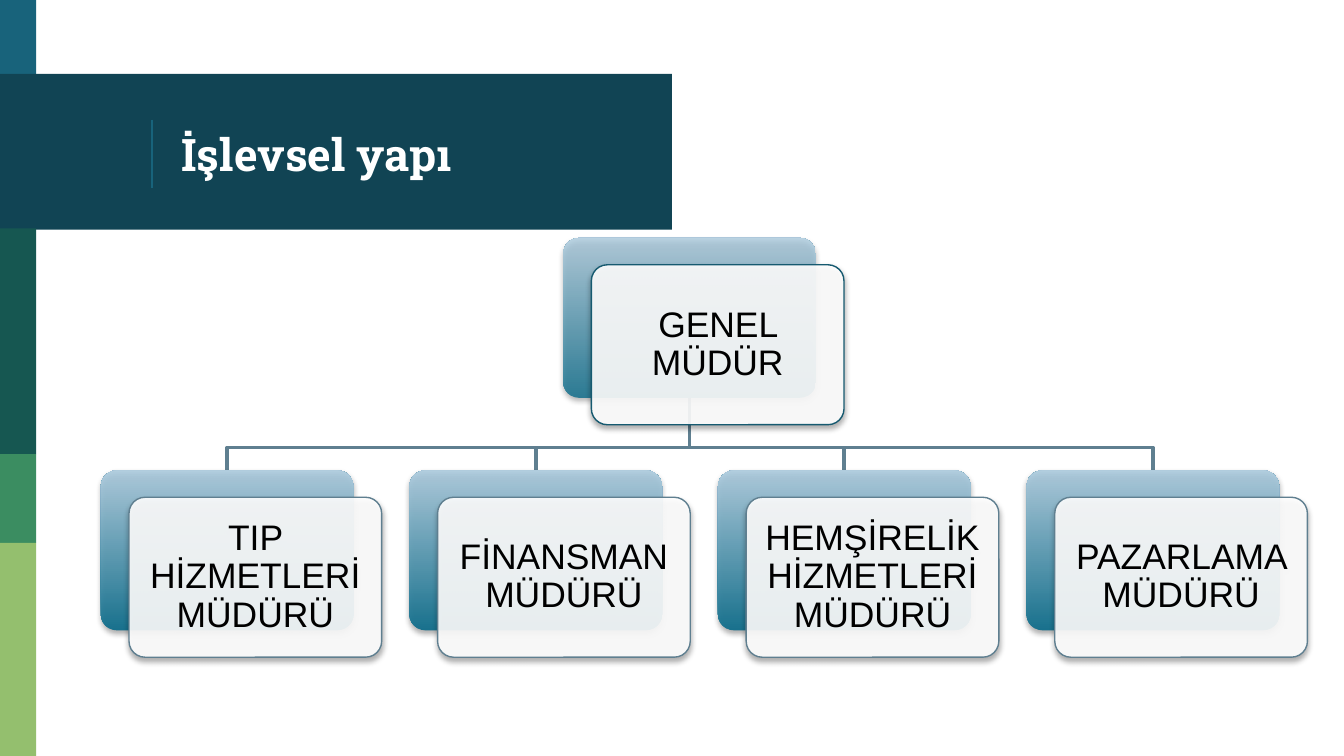
from dataclasses import dataclass

from lxml import etree
from pptx import Presentation
from pptx.dml.color import RGBColor
from pptx.enum import shapes, text
from pptx.oxml.ns import qn
from pptx.util import Inches, Pt

CARD_W, CARD_H = 1.88, 1.19
OFFSET_X, OFFSET_Y = 0.21, 0.2
MANAGER_LEFT, MANAGER_TOP, MANAGER_STEP = 0.75, 3.5, 2.296
BUS_Y = 3.33


@dataclass(frozen=True)
class Band:
    top: float
    width: float
    height: float
    color: str


@dataclass(frozen=True)
class Post:
    title: str
    left: float
    top: float
    outline: str = "5F7F90"
    opacity: int = 90

    @property
    def center(self) -> float:
        return self.left + CARD_W / 2


BANDS = [
    Band(0, 0.27, 0.58, "18637B"),
    Band(0.55, 5, 1.16, "114454"),
    Band(1.7, 0.27, 1.68, "165751"),
    Band(3.38, 0.27, 0.66, "3B8D61"),
    Band(4.04, 0.27, 1.59, "94BF6E"),
]
DIRECTOR = Post("GENEL MÜDÜR", 4.19, 1.77, "165A70", 80)
MANAGERS = [
    Post(title, MANAGER_LEFT + i * MANAGER_STEP, MANAGER_TOP)
    for i, title in enumerate([
        "TIP HİZMETLERİ MÜDÜRÜ",
        "FİNANSMAN MÜDÜRÜ",
        "HEMŞİRELİK HİZMETLERİ MÜDÜRÜ",
        "PAZARLAMA MÜDÜRÜ",
    ])
]


def rgb(color: str) -> RGBColor:
    return RGBColor.from_string(color)


def set_opacity(shape, percent: int) -> None:
    """Make every colour set so far on the shape partly transparent."""
    for color in shape._element.spPr.iter(qn("a:srgbClr")):
        etree.SubElement(color, qn("a:alpha"), val=str(percent * 1000))


def add_soft_shadow(shape) -> None:
    shape.shadow.inherit = False
    effects = shape._element.spPr.find(qn("a:effectLst"))
    shadow = etree.SubElement(
        effects, qn("a:outerShdw"), blurRad=str(Pt(3.1)), dist=str(Pt(1.8)),
        dir="5400000", algn="ctr", rotWithShape="0")
    color = etree.SubElement(shadow, qn("a:srgbClr"), val="000000")
    etree.SubElement(color, qn("a:alpha"), val="35000")


def set_text(shape, words: str, font_name: str, size: float, color: str,
             inset: float, bold: bool = False) -> None:
    frame = shape.text_frame
    frame.word_wrap = True
    frame.vertical_anchor = text.MSO_ANCHOR.MIDDLE
    frame.margin_left = frame.margin_right = Inches(inset)
    frame.margin_top = frame.margin_bottom = Inches(inset)
    paragraph = frame.paragraphs[0]
    paragraph.text = words
    font = paragraph.font
    font.name, font.size, font.bold = font_name, Pt(size), bold
    font.color.rgb = rgb(color)


def draw_band(slide, band: Band) -> None:
    bar = slide.shapes.add_shape(
        shapes.MSO_SHAPE.RECTANGLE, 0, Inches(band.top),
        Inches(band.width), Inches(band.height))
    bar.fill.solid()
    bar.fill.fore_color.rgb = rgb(band.color)
    bar.line.fill.background()
    bar.shadow.inherit = False


def draw_heading(slide) -> None:
    rule = slide.shapes.add_connector(
        shapes.MSO_CONNECTOR.STRAIGHT,
        Inches(1.13), Inches(0.89), Inches(1.13), Inches(1.4))
    rule.line.color.rgb = rgb("18637B")
    rule.line.width = Pt(0.75)
    etree.SubElement(rule._element.spPr, qn("a:effectLst"))
    heading = slide.shapes.add_textbox(
        Inches(1.25), Inches(0.58), Inches(3.51), Inches(1.12))
    set_text(heading, "İşlevsel yapı", "Roboto Slab", 24, "FFFFFF", 0.1, True)


def draw_branch(slide, upper: Post, lower: Post) -> None:
    points = [(upper.center, upper.top + CARD_H), (upper.center, BUS_Y),
              (lower.center, BUS_Y), (lower.center, lower.top)]
    start, *rest = [(Inches(x), Inches(y)) for x, y in points]
    builder = slide.shapes.build_freeform(*start)
    builder.add_line_segments(rest, close=False)
    branch = builder.convert_to_shape()
    branch.fill.background()
    branch.line.color.rgb = rgb("5F7F90")
    branch.line.width = Pt(2)
    branch.shadow.inherit = False


def add_card(slide, left: float, top: float):
    card = slide.shapes.add_shape(
        shapes.MSO_SHAPE.ROUNDED_RECTANGLE, Inches(left), Inches(top),
        Inches(CARD_W), Inches(CARD_H))
    card.adjustments[0] = 0.1
    add_soft_shadow(card)
    return card


def draw_post(slide, post: Post) -> None:
    """Draw a gradient card with a white, labelled card offset in front."""
    back = add_card(slide, post.left, post.top)
    back.fill.gradient()
    back.fill.gradient_angle = 90
    for stop, color in zip(back.fill.gradient_stops, ("096B8A", "ABCADD")):
        stop.color.rgb = rgb(color)
    back.line.fill.background()

    front = add_card(slide, post.left + OFFSET_X, post.top + OFFSET_Y)
    front.fill.solid()
    front.fill.fore_color.rgb = rgb("FFFFFF")
    for card, opacity in ((back, post.opacity), (front, 90)):
        fill_only_opacity(card, opacity)
    front.line.color.rgb = rgb(post.outline)
    front.line.width = Pt(0.75)
    set_text(front, post.title, "Arial", 19, "000000", 0.08)
    label = front.text_frame.paragraphs[0]
    label.alignment = text.PP_ALIGN.CENTER
    label.line_spacing = 0.9


def fill_only_opacity(card, percent: int) -> None:
    """Set the opacity of the fill and leave the shadow as it is."""
    for tag in ("a:solidFill", "a:gradFill"):
        for fill in card._element.spPr.findall(qn(tag)):
            for color in fill.iter(qn("a:srgbClr")):
                etree.SubElement(color, qn("a:alpha"), val=str(percent * 1000))


def main() -> None:
    deck = Presentation()
    deck.slide_width, deck.slide_height = Inches(10), Inches(5.625)
    slide = deck.slides.add_slide(deck.slide_layouts[6])
    for band in BANDS:
        draw_band(slide, band)
    draw_heading(slide)
    for manager in reversed(MANAGERS):
        draw_branch(slide, DIRECTOR, manager)
    for post in (DIRECTOR, *MANAGERS):
        draw_post(slide, post)
    deck.save("out.pptx")


if __name__ == "__main__":
    main()
